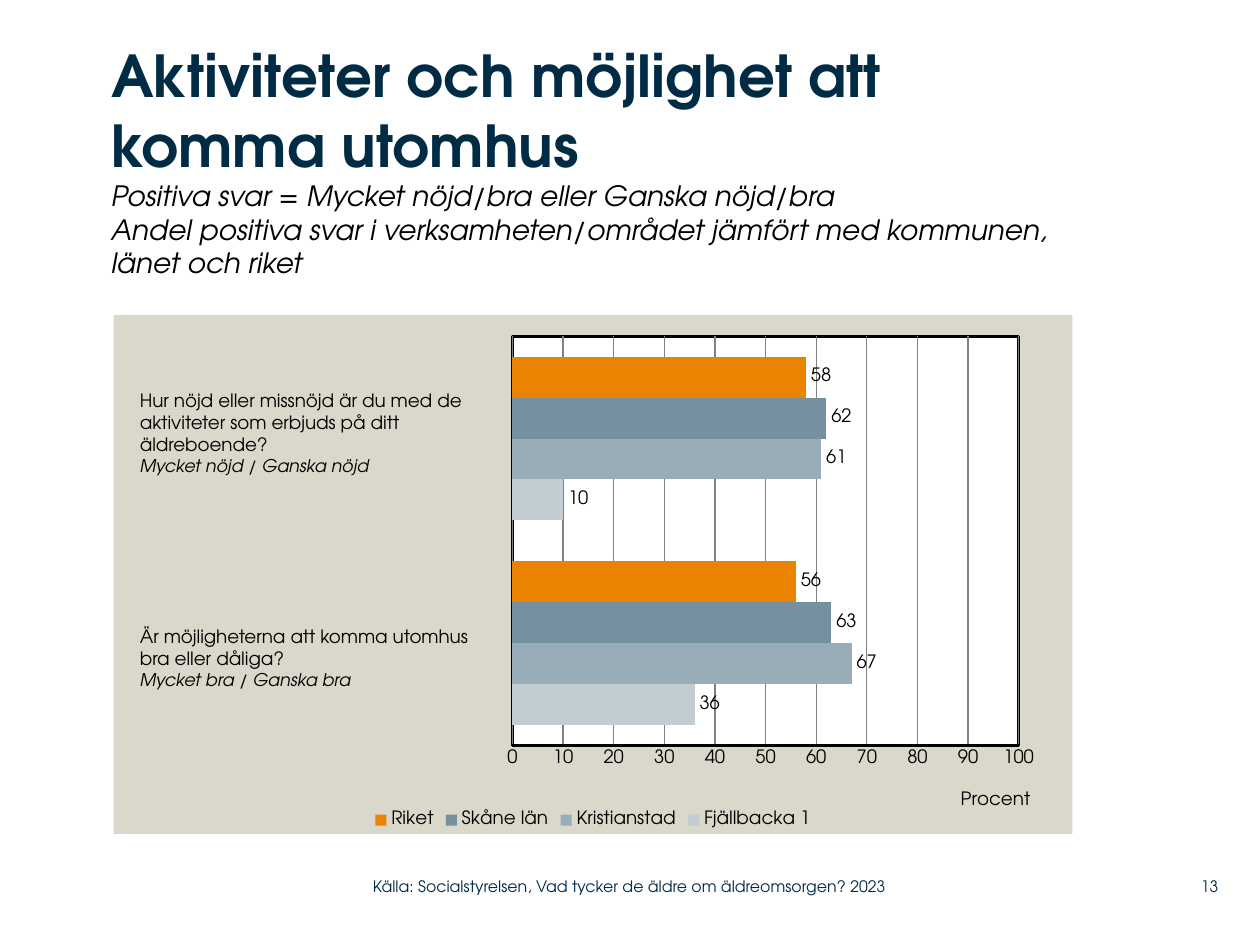
from copy import deepcopy
from dataclasses import dataclass

from lxml.etree import fromstring
from pptx import Presentation
from pptx.chart.data import CategoryChartData
from pptx.dml.color import RGBColor
from pptx.enum.chart import XL_CHART_TYPE as ChartType
from pptx.enum.chart import XL_LABEL_POSITION as LabelPos
from pptx.enum.chart import XL_LEGEND_POSITION as LegendPos
from pptx.enum.chart import XL_TICK_MARK as Tick
from pptx.enum.text import MSO_ANCHOR as Anchor
from pptx.enum.text import MSO_AUTO_SIZE as AutoSize
from pptx.enum.text import PP_ALIGN as Align
from pptx.oxml.ns import nsdecls, qn
from pptx.util import Cm, Pt

FONT = "TeX Gyre Adventor"
BLACK = RGBColor(0x00, 0x00, 0x00)
NAVY = RGBColor(0x00, 0x2B, 0x45)
GREY = RGBColor(0x80, 0x80, 0x80)
SAND = RGBColor(0xDA, 0xD7, 0xCB)
WHITE = RGBColor(0xFF, 0xFF, 0xFF)
PALE = RGBColor(0xC2, 0xCD, 0xD3)
LIGHT = RGBColor(0x99, 0xAD, 0xB9)
SLATE = RGBColor(0x75, 0x90, 0x9F)
ORANGE = RGBColor(0xE9, 0x83, 0x00)


@dataclass
class Series:
    name: str
    values: tuple
    color: RGBColor


@dataclass
class Question:
    top: float
    width: float
    height: float
    lines: tuple
    answers: str


SERIES = (
    Series("Fjällbacka 1", (36, 10), PALE),
    Series("Kristianstad", (67, 61), LIGHT),
    Series("Skåne län", (63, 62), SLATE),
    Series("Riket", (56, 58), ORANGE),
)
QUESTIONS = (
    Question(7.72, 7.62, 2.49,
             ("Hur nöjd eller missnöjd är du med de aktiviteter som erbjuds på ditt äldreboende?",),
             "Mycket nöjd / Ganska nöjd"),
    Question(12.47, 7.65, 2.06,
             ("Är möjligheterna att komma utomhus", "bra eller dåliga?"),
             "Mycket bra / Ganska bra"),
)


def set_font(font, size: float, color=BLACK, bold=False, italic=False) -> None:
    font.name, font.size, font.bold, font.italic = FONT, Pt(size), bold, italic
    font.color.rgb = color


def add_text(p, text: str, **style) -> None:
    for i, line in enumerate(text.split("\n")):
        if i:
            p.add_line_break()
            p._p[-1].append(deepcopy(r._r.rPr))
        r = p.add_run()
        r.text = line
        set_font(r.font, **style)


def add_box(slide, left: float, top: float, width: float, height: float,
            anchor=Anchor.TOP, inset=True):
    tf = slide.shapes.add_textbox(Cm(left), Cm(top), Cm(width), Cm(height)).text_frame
    tf.word_wrap = True
    tf.vertical_anchor = anchor
    if not inset:
        tf.margin_left = tf.margin_top = tf.margin_right = tf.margin_bottom = 0
    return tf


def add_question(slide, q: Question) -> None:
    tf = add_box(slide, 2.57, q.top, q.width, q.height)
    tf.auto_size = AutoSize.SHAPE_TO_FIT_TEXT
    for i, line in enumerate(q.lines):
        add_text(tf.add_paragraph() if i else tf.paragraphs[0], line, size=10.5)
    add_text(tf.add_paragraph(), q.answers, size=10, italic=True)


def add_footer(slide, text: str, left: float, width: float, align=Align.LEFT) -> None:
    p = add_box(slide, left, 17.5, width, 0.74, Anchor.MIDDLE, inset=False).paragraphs[0]
    p.alignment = align
    add_text(p, text, size=9, color=NAVY)


def area_format(fill: RGBColor, line=None):
    stroke = (f'<a:ln w="{Pt(2)}"><a:solidFill><a:srgbClr val="{line}"/></a:solidFill></a:ln>'
              if line is not None else "<a:ln><a:noFill/></a:ln>")
    return fromstring(f'<c:spPr {nsdecls("c", "a")}><a:solidFill><a:srgbClr val="{fill}"/>'
                      f"</a:solidFill>{stroke}</c:spPr>")


def set_layout(parent, index: int, **parts) -> None:
    for old in parent.findall(qn("c:layout")):
        parent.remove(old)
    target = '<c:layoutTarget val="inner"/>' if "w" in parts else ""
    modes = "".join(f'<c:{k}Mode val="edge"/>' for k in "xy")
    sizes = "".join(f'<c:{k} val="{v}"/>' for k, v in parts.items())
    parent.insert(index, fromstring(
        f'<c:layout {nsdecls("c")}><c:manualLayout>{target}{modes}{sizes}'
        "</c:manualLayout></c:layout>"))


def add_bar_chart(slide) -> None:
    data = CategoryChartData(number_format="0")
    data.categories = ["1", "2"]
    for s in SERIES:
        data.add_series(s.name, s.values)
    chart = slide.shapes.add_chart(ChartType.BAR_CLUSTERED, Cm(2.29), Cm(6.35),
                                   Cm(19.33), Cm(10.46), data).chart
    set_font(chart.font, 10.5)
    chart.has_title = False
    chart.has_legend = True
    chart.legend.position = LegendPos.BOTTOM
    chart.legend.include_in_layout = False
    set_font(chart.legend.font, 10.5)

    plot = chart.plots[0]
    plot.gap_width = 100
    plot.vary_by_categories = False
    for s, bars in zip(SERIES, plot.series):
        bars.format.fill.solid()
        bars.format.fill.fore_color.rgb = s.color
        labels = bars.data_labels
        labels.show_value = True
        labels.position = LabelPos.OUTSIDE_END
        set_font(labels.font, 10.5)

    chart.category_axis.visible = False
    axis = chart.value_axis
    axis.minimum_scale, axis.maximum_scale, axis.major_unit = 0, 100, 10
    axis.major_tick_mark = axis.minor_tick_mark = Tick.NONE
    axis.has_major_gridlines = True
    axis.major_gridlines.format.line.color.rgb = GREY
    axis.major_gridlines.format.line.width = Pt(0.75)
    axis.format.line.color.rgb = BLACK
    axis.format.line.width = Pt(2)
    set_font(axis.tick_labels.font, 10.5)
    add_text(axis.axis_title.text_frame.paragraphs[0], "Procent", size=10.5)
    set_layout(axis.axis_title._element, 1, x=0.88, y=0.91)

    root = chart._chartSpace.find(qn("c:chart"))
    area = root.find(qn("c:plotArea"))
    set_layout(area, 0, x=0.416, y=0.041, w=0.528, h=0.789)
    area.append(area_format(WHITE, BLACK))
    root.addnext(area_format(SAND))


def main() -> None:
    prs = Presentation()
    prs.slide_width, prs.slide_height = Cm(25.4), Cm(19.05)
    slide = prs.slides.add_slide(prs.slide_layouts[6])
    add_bar_chart(slide)
    p = add_box(slide, 2.24, 0.81, 19.81, 4.8, inset=False).paragraphs[0]
    add_text(p, "Aktiviteter och möjlighet att komma utomhus", size=33, color=NAVY, bold=True)
    add_text(p, " \nPositiva svar = Mycket nöjd/bra eller Ganska nöjd/bra\n"
             "Andel positiva svar i verksamheten/området jämfört med kommunen, länet och riket",
             size=16, italic=True)
    for q in QUESTIONS:
        add_question(slide, q)
    add_footer(slide, "13", 23.37, 1.19, Align.RIGHT)
    add_footer(slide, "Källa: Socialstyrelsen, Vad tycker de äldre om äldreomsorgen? 2023", 7.52, 11.25)
    prs.save("out.pptx")


if __name__ == "__main__":
    main()
